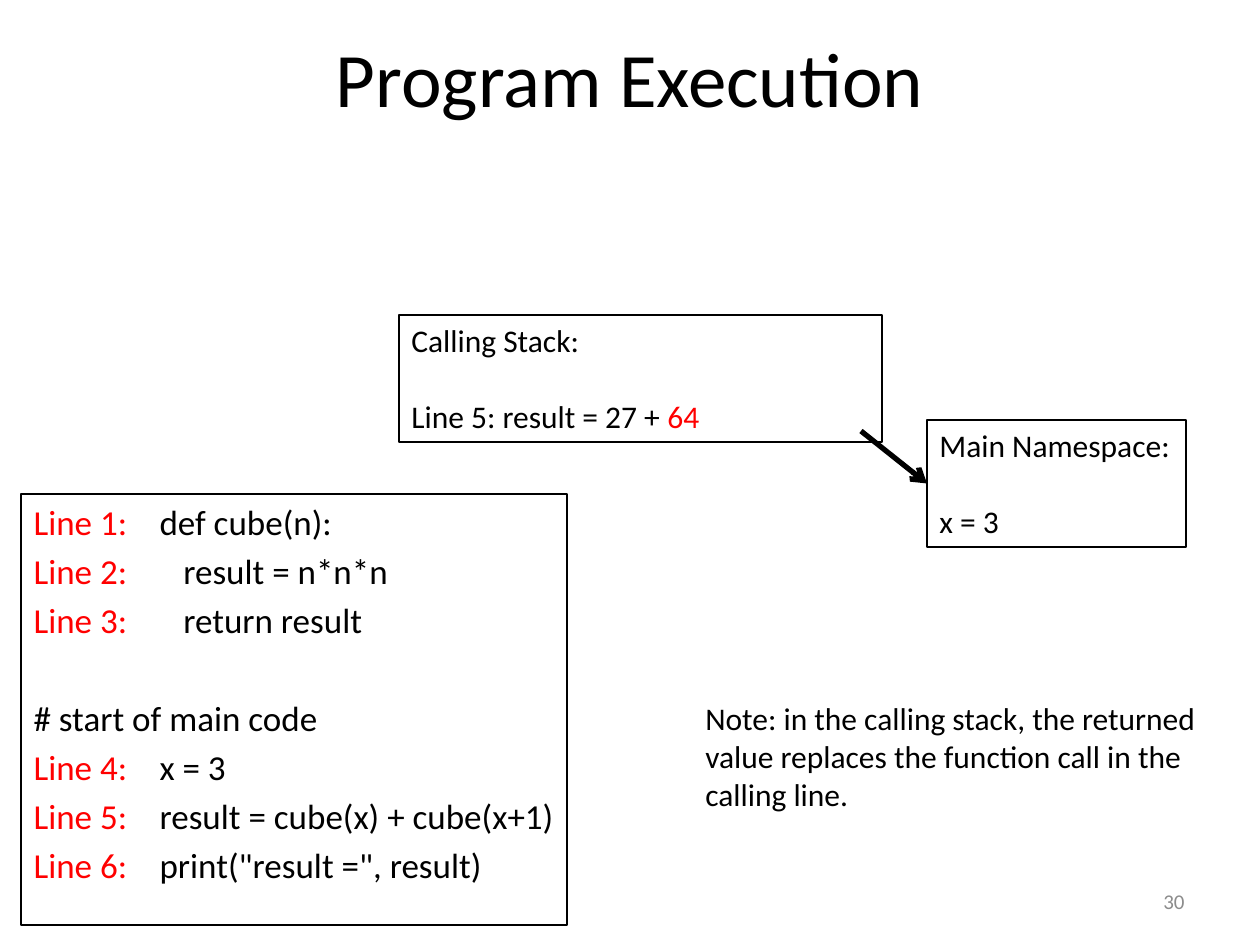
from pptx import Presentation
from pptx.dml.color import RGBColor
from pptx.enum.shapes import MSO_CONNECTOR, MSO_SHAPE
from pptx.enum.text import MSO_ANCHOR, MSO_AUTO_SIZE, PP_ALIGN
from pptx.oxml.ns import qn
from pptx.util import Pt
from lxml import etree

LINE, RECT = MSO_CONNECTOR.STRAIGHT, MSO_SHAPE.RECTANGLE
TOP, MIDDLE = MSO_ANCHOR.TOP, MSO_ANCHOR.MIDDLE
LEFT, CENTER, RIGHT = PP_ALIGN.LEFT, PP_ALIGN.CENTER, PP_ALIGN.RIGHT
FIXED = MSO_AUTO_SIZE.NONE
SCALE = 914400 / 126  # EMU in one px
FONT = "Calibri"
COLORS = {"ink": "000000", "mark": "FF0000", "page": "8C8C8C"}


def emu(px):
    return round(px * SCALE)


def tint(name):
    return RGBColor.from_string(COLORS[name])


class Deck:
    def __init__(self, wide, high):
        self.prs = Presentation()
        self.prs.slide_width, self.prs.slide_height = emu(wide), emu(high)
        self.slide = self.prs.slides.add_slide(self.prs.slide_layouts[1])

    def place(self, shape, box):
        shape.left, shape.top, shape.width, shape.height = map(emu, box)

    def border(self, shape):
        shape.line.color.rgb = tint("ink")
        shape.line.width = Pt(0.75)

    def letter(self, shape, lines, size, align=LEFT, anchor=TOP, gaps=(), tab=None):
        """Each line is a list of (text, color); gaps are points before each line."""
        frame = shape.text_frame
        frame.auto_size, frame.word_wrap = FIXED, True
        frame.vertical_anchor = anchor
        for i, parts in enumerate(lines):
            para = frame.paragraphs[0] if i == 0 else frame.add_paragraph()
            if tab:
                self.stop(para, tab)
            para.alignment = align
            para.space_before = Pt(gaps[i] if gaps else 0)
            for text, color in parts:
                run = para.add_run()
                run.text = text
                run.font.name, run.font.size = FONT, Pt(size)
                run.font.color.rgb = tint(color)

    def stop(self, para, px):
        """Drop bullet and indent, and set one tab stop."""
        props = para._p.get_or_add_pPr()
        props.set("marL", "0")
        props.set("indent", "0")
        etree.SubElement(props, qn("a:buNone"))
        tabs = etree.SubElement(props, qn("a:tabLst"))
        etree.SubElement(tabs, qn("a:tab"), pos=str(emu(px)), algn="l")

    def title(self, box, text):
        shape = self.slide.shapes.title
        self.place(shape, box)
        self.letter(shape, [[(text, "ink")]], 44, CENTER, MIDDLE)

    def code(self, box, lines, gaps):
        shape = self.slide.placeholders[1]
        self.place(shape, box)
        self.border(shape)
        self.letter(shape, lines, 20, gaps=gaps, tab=117)

    def panel(self, box, lines):
        shape = self.slide.shapes.add_shape(RECT, *map(emu, box))
        shape.shadow.inherit = False
        shape.fill.background()
        self.border(shape)
        self.letter(shape, lines, 18, gaps=(0, 22))
        return shape

    def label(self, box, lines, size, align=LEFT, anchor=TOP):
        shape = self.slide.shapes.add_textbox(*map(emu, box))
        self.letter(shape, lines, size, align, anchor)

    def arrow(self, start, goal, side):
        line = self.slide.shapes.add_connector(LINE, *map(emu, start + start))
        line.end_connect(goal, side)
        line.line.color.rgb = tint("ink")
        line.line.width = Pt(3)
        props = line._element.spPr
        etree.SubElement(props.get_or_add_ln(), qn("a:tailEnd"), type="arrow")
        etree.SubElement(props, qn("a:effectLst"))


def main():
    deck = Deck(1260, 945)
    deck.title((63, 21, 1134, 111), "Program Execution")

    # Program listing, with a wider gap before the main part
    def step(num, text):
        return [(f"Line {num}:", "mark"), ("\t" + text, "ink")]

    lines = [
        step(1, "def cube(n):"),
        step(2, "   result = n*n*n"),
        step(3, "   return result"),
        [("# start of main code", "ink")],
        step(4, "x = 3"),
        step(5, "result = cube(x) + cube(x+1)"),
        step(6, 'print("result =", result)'),
    ]
    deck.code((21, 494, 546, 431), lines, (0, 4, 4, 32, 4, 4, 4))

    # Page number
    deck.label((903, 876, 294, 50), [[("30", "page")]], 12, RIGHT, MIDDLE)

    # Namespace and calling stack
    space = deck.panel((927, 420, 259, 127), [[("Main Namespace:", "ink")], [("x = 3", "ink")]])
    deck.panel((399, 315, 483, 127), [
        [("Calling Stack:", "ink")],
        [("Line 5: result = 27 + ", "ink"), ("64", "mark")],
    ])
    deck.arrow((861, 431), space, 1)

    # Note
    note = (
        "Note: in the calling stack, the returned",
        "value replaces the function call in the",
        "calling line.",
    )
    deck.label((693, 693, 529, 127), [[(text, "ink")] for text in note], 18)

    deck.prs.save("out.pptx")


if __name__ == "__main__":
    main()
